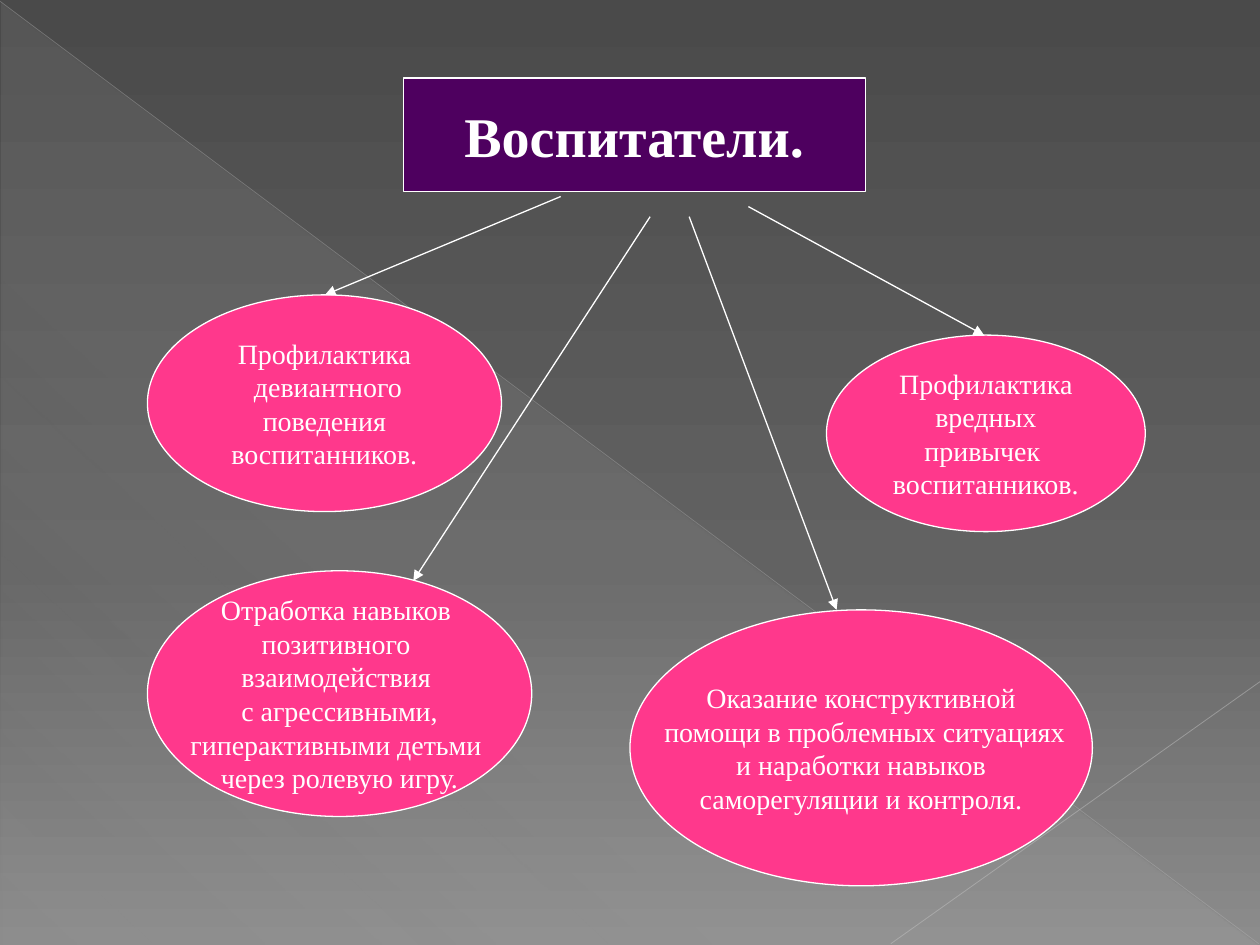
from lxml import etree
from pptx import Presentation
from pptx.dml.color import RGBColor
from pptx.enum.shapes import MSO_CONNECTOR, MSO_SHAPE
from pptx.enum.text import MSO_ANCHOR, MSO_AUTO_SIZE, PP_ALIGN
from pptx.oxml.ns import qn
from pptx.util import Inches, Pt

rgb = RGBColor.from_string
FONT = "Times New Roman"
WHITE = "FFFFFF"


def set_gradient(fill, owner, angle, stops):
    """Fill with (position %, colour, opacity %) stops."""
    fill.gradient()
    gradient = owner.find(".//" + qn("a:gradFill"))
    for child in list(gradient):
        gradient.remove(child)
    stop_list = etree.SubElement(gradient, qn("a:gsLst"))
    for position, color, opacity in stops:
        stop = etree.SubElement(stop_list, qn("a:gs"), pos=str(position * 1000))
        paint = etree.SubElement(stop, qn("a:srgbClr"), val=color)
        etree.SubElement(paint, qn("a:alpha"), val=str(opacity * 1000))
    etree.SubElement(gradient, qn("a:lin"), ang=str(angle * 60000), scaled="0")


def add_line(start, end, color, width, opacity=100, arrow=False):
    connector = slide.shapes.add_connector(
        MSO_CONNECTOR.STRAIGHT, *map(Inches, start + end))
    connector.line.color.rgb = rgb(color)
    connector.line.width = Pt(width)
    properties = connector._element.spPr
    paint = properties.find(".//" + qn("a:srgbClr"))
    etree.SubElement(paint, qn("a:alpha"), val=str(opacity * 1000))
    if arrow:
        etree.SubElement(properties.find(qn("a:ln")), qn("a:tailEnd"), type="triangle")
    etree.SubElement(properties, qn("a:effectLst"))


prs = Presentation()
prs.slide_width, prs.slide_height = Inches(10), Inches(7.5)
slide = prs.slides.add_slide(prs.slide_layouts[5])

# Backdrop: grey gradient, pale triangle and two thin diagonals
set_gradient(slide.background.fill, slide._element, 90,
             [(0, "4A4A4A", 100), (60, "626262", 100), (100, "8C8C8C", 100)])
triangle = slide.shapes.add_shape(
    MSO_SHAPE.RIGHT_TRIANGLE, *map(Inches, (0.01, 0.02, 9.98, 7.48)))
triangle.shadow.inherit = False
triangle.line.fill.background()
set_gradient(triangle.fill, triangle._element, 133,
             [(0, "D2D2D2", 10), (70, "D2D2D2", 8), (100, "D2D2D2", 1)])
add_line((0, 0.01), (9.99, 7.49), "BFBFBF", 0.39, opacity=35)
add_line((10, 5.41), (7.07, 7.49), "C6C6C6", 0.47, opacity=45)

# Title, brought in front of the backdrop
title = slide.shapes.title
slide.shapes._spTree.append(title._element)
title.left, title.top, title.width, title.height = map(Inches, (3.2, 0.62, 3.67, 0.9))
title.text_frame.text = "Воспитатели."

# Ovals with the educators' tasks
tasks = [
    ((1.17, 4.53, 3.05, 1.95),
     "Отработка навыков \nпозитивного \nвзаимодействия \nс агрессивными,\n"
     "гиперактивными детьми \nчерез ролевую игру."),
    ((5, 4.84, 3.67, 2.19),
     "Оказание конструктивной\n помощи в проблемных ситуациях\n"
     " и наработки навыков \nсаморегуляции и контроля."),
    ((6.56, 2.66, 2.53, 1.56),
     "Профилактика\n вредных \nпривычек \nвоспитанников."),
    ((1.17, 2.34, 2.81, 1.72),
     "Профилактика\n девиантного\n поведения \nвоспитанников."),
]
ovals = []
for box, text in tasks:
    oval = slide.shapes.add_shape(MSO_SHAPE.OVAL, *map(Inches, box))
    oval.shadow.inherit = False
    oval.text_frame.text = text
    ovals.append(oval)

# Shared look of the title and the ovals
for block in [title] + ovals:
    is_title = block is title
    block.fill.solid()
    block.fill.fore_color.rgb = rgb("4E005F" if is_title else "FF388C")
    block.line.color.rgb = rgb(WHITE)
    block.line.width = Pt(0.75)
    frame = block.text_frame
    frame.word_wrap = False
    frame.auto_size = MSO_AUTO_SIZE.NONE
    frame.vertical_anchor = MSO_ANCHOR.MIDDLE
    for paragraph in frame.paragraphs:
        paragraph.alignment = PP_ALIGN.CENTER
        font = paragraph.runs[0].font
        font.name = FONT
        font.size = Pt(32 if is_title else 16)
        font.bold = is_title
        font.color.rgb = rgb(WHITE)

# Arrows from the title to the ovals
for start, end in [((4.45, 1.56), (2.58, 2.34)), ((5.47, 1.72), (6.64, 4.84)),
                   ((5.94, 1.64), (7.81, 2.66)), ((5.16, 1.72), (3.28, 4.61))]:
    add_line(start, end, WHITE, 0.75, arrow=True)

prs.save("out.pptx")
